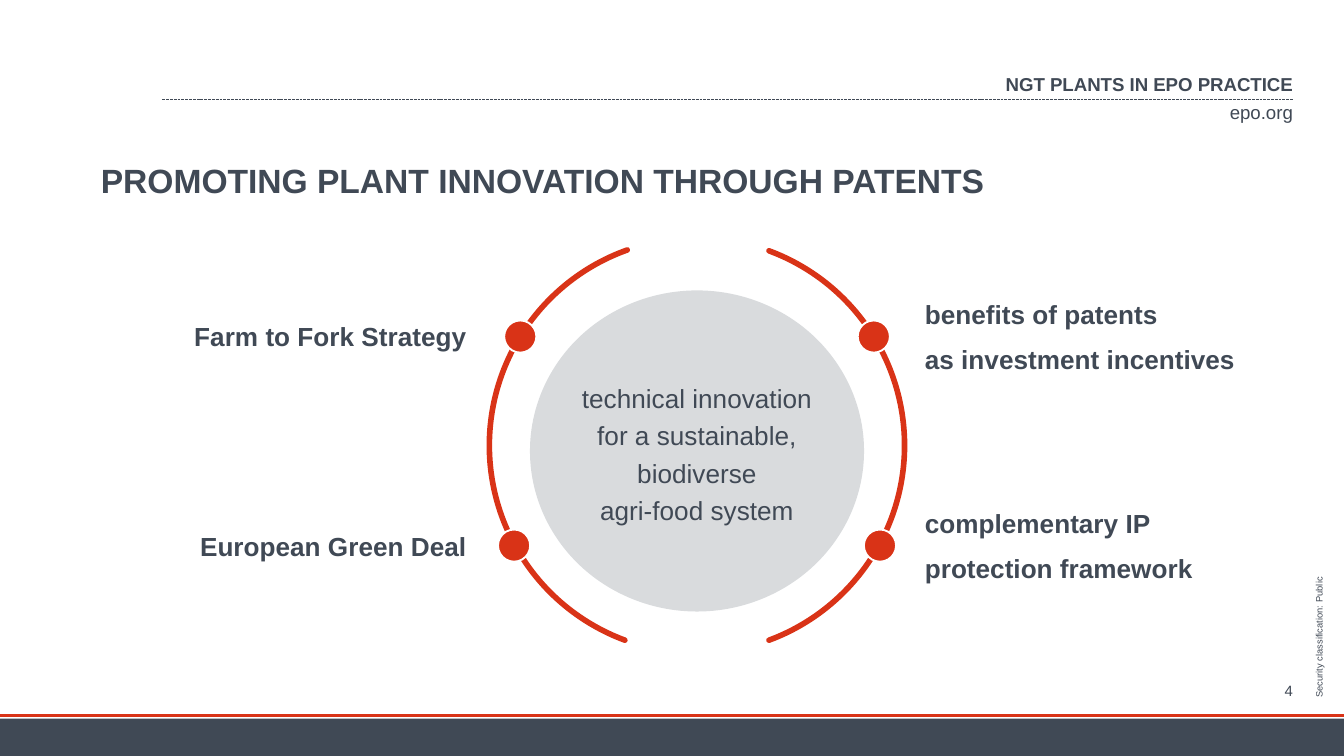
from lxml import etree
from pptx import Presentation
from pptx import util as u
from pptx.dml.color import RGBColor
from pptx.enum import dml, shapes, text
from pptx.oxml.ns import qn

SLATE, RED, GREY, WHITE = "404955", "D93317", "D9DBDD", "FFFFFF"
LEFT, CENTER, RIGHT = text.PP_ALIGN.LEFT, text.PP_ALIGN.CENTER, text.PP_ALIGN.RIGHT
TOP, MIDDLE, BOTTOM = text.MSO_ANCHOR.TOP, text.MSO_ANCHOR.MIDDLE, text.MSO_ANCHOR.BOTTOM

TITLE = "PROMOTING PLANT INNOVATION THROUGH PATENTS"
HEADER = "NGT PLANTS IN EPO PRACTICE"
WEBSITE = "epo.org"
CLASSIFICATION = "Security classification: Public"
PAGE = "4"
GOAL = ["technical innovation", "for a sustainable,", "biodiverse", "agri-food system"]
ROWS = [
    {"y": 180.3, "dot_offset": 94.7, "labels": [
        (["Farm to Fork Strategy"], 152),
        (["benefits of patents", "as investment incentives"], 172)]},
    {"y": 292.3, "dot_offset": 98, "labels": [
        (["European Green Deal"], 149),
        (["complementary IP", "protection framework"], 150)]},
]
WIDTH, HEIGHT = 720, 405
MARGIN_RIGHT = 692.6
CENTER_X, RING_Y, DISC_Y = 373.4, 238.7, 241.6
RING, DOT = 222.4, 17.2
DISC_WIDTH, DISC_HEIGHT = 178, 171
LABEL_EDGES = [253, 492.5]
ARCS = [(290.3, 69.7), (110.3, 250.4)]


def color(value):
    return RGBColor.from_string(value)


def box_at(*lengths):
    return [u.Pt(length) for length in lengths]


def write(shape, lines, size, bold=False, align=LEFT, anchor=MIDDLE, wrap=True,
          inset=(0, 0), gap=0, spacing=None):
    frame = shape.text_frame
    frame.text = "\n".join(lines)
    side, end = box_at(*inset)
    settings = {"auto_size": text.MSO_AUTO_SIZE.NONE, "word_wrap": wrap,
                "vertical_anchor": anchor, "margin_left": side, "margin_right": side,
                "margin_top": end, "margin_bottom": end}
    for name, value in settings.items():
        setattr(frame, name, value)
    for index, paragraph in enumerate(frame.paragraphs):
        paragraph.alignment = align
        paragraph.space_before = u.Pt(gap if index else 0)
        paragraph.line_spacing = spacing
        for name, value in {"name": "Arial", "size": u.Pt(size), "bold": bold}.items():
            setattr(paragraph.font, name, value)
        paragraph.font.color.rgb = color(SLATE)
    return shape


def add_text(slide, box, lines, size, **options):
    return write(slide.shapes.add_textbox(*box_at(*box)), lines, size, **options)


def add_shape(slide, kind, box, fill=None, line=None, weight=1):
    shape = slide.shapes.add_shape(kind, *box_at(*box))
    shape.shadow.inherit = False
    if fill:
        shape.fill.solid()
        shape.fill.fore_color.rgb = color(fill)
    else:
        shape.fill.background()
    if line:
        shape.line.color.rgb = color(line)
        shape.line.width = u.Pt(weight)
    else:
        shape.line.fill.background()
    return shape


def add_ellipse(slide, x, y, width, height, fill, line):
    box = (x - width / 2, y - height / 2, width, height)
    return add_shape(slide, shapes.MSO_SHAPE.OVAL, box, fill, line)


def add_rule(slide, left, right, y, line, weight, dash=None):
    rule = slide.shapes.add_connector(shapes.MSO_CONNECTOR.STRAIGHT, *box_at(left, y, right, y))
    rule.line.color.rgb = color(line)
    rule.line.width = u.Pt(weight)
    rule.line.dash_style = dash
    etree.SubElement(rule._element.spPr, qn("a:effectLst"))


def add_arc(slide, start, end):
    box = (CENTER_X - RING / 2, RING_Y - RING / 2, RING, RING)
    arc = add_shape(slide, shapes.MSO_SHAPE.ARC, box, line=RED, weight=3)
    for index, angle in enumerate((start, end)):
        arc.adjustments[index] = angle * 0.6
    arc.line._get_or_add_ln().set("cap", "rnd")


def add_frame(slide):
    add_text(slide, (659, 54, MARGIN_RIGHT - 659, 12.4), [WEBSITE], 10, align=RIGHT, wrap=False)
    add_rule(slide, 87, MARGIN_RIGHT, 53.2, SLATE, 0.5, dml.MSO_LINE.SQUARE_DOT)
    add_shape(slide, shapes.MSO_SHAPE.RECTANGLE, (0, 385, WIDTH, HEIGHT - 385), SLATE)
    add_rule(slide, 0, WIDTH, 383.2, RED, 1.5)
    add_text(slide, (674, 338.4, 65, 6), [CLASSIFICATION], 5, anchor=TOP).rotation = 270
    add_text(slide, (650, 365.4, MARGIN_RIGHT - 650, 9.4), [PAGE], 8, align=RIGHT)
    add_text(slide, (268, 38.3, MARGIN_RIGHT - 268, 13), [HEADER], 10, bold=True, align=RIGHT)


def add_diagram(slide):
    add_ellipse(slide, CENTER_X, DISC_Y, DISC_WIDTH, DISC_HEIGHT, GREY, GREY)
    add_text(slide, (CENTER_X - 65, DISC_Y - 45.5, 130, 91), GOAL, 14, align=CENTER,
             wrap=False, inset=(3, 6), spacing=1.2)
    for start, end in ARCS:
        add_arc(slide, start, end)
    for row in ROWS:
        for side, (lines, width) in enumerate(row["labels"]):
            direction = 1 if side else -1
            x = CENTER_X + direction * row["dot_offset"]
            add_ellipse(slide, x, row["y"], DOT, DOT, RED, WHITE)
            height = 23 + 25 * (len(lines) - 1)
            left = LABEL_EDGES[side] if side else LABEL_EDGES[side] - width
            add_text(slide, (left, row["y"] - height / 2, width, height), lines, 14, bold=True,
                     align=LEFT if side else RIGHT, wrap=False, inset=(3, 3), gap=7.7)


def main():
    presentation = Presentation()
    presentation.slide_width, presentation.slide_height = box_at(WIDTH, HEIGHT)
    slide = presentation.slides.add_slide(presentation.slide_layouts[5])
    title = slide.shapes.title
    title.left, title.top, title.width, title.height = box_at(54, 63.4, MARGIN_RIGHT - 54, 44)
    write(title, [TITLE], 18, bold=True, anchor=BOTTOM)
    add_frame(slide)
    add_diagram(slide)
    presentation.save("out.pptx")


if __name__ == "__main__":
    main()
